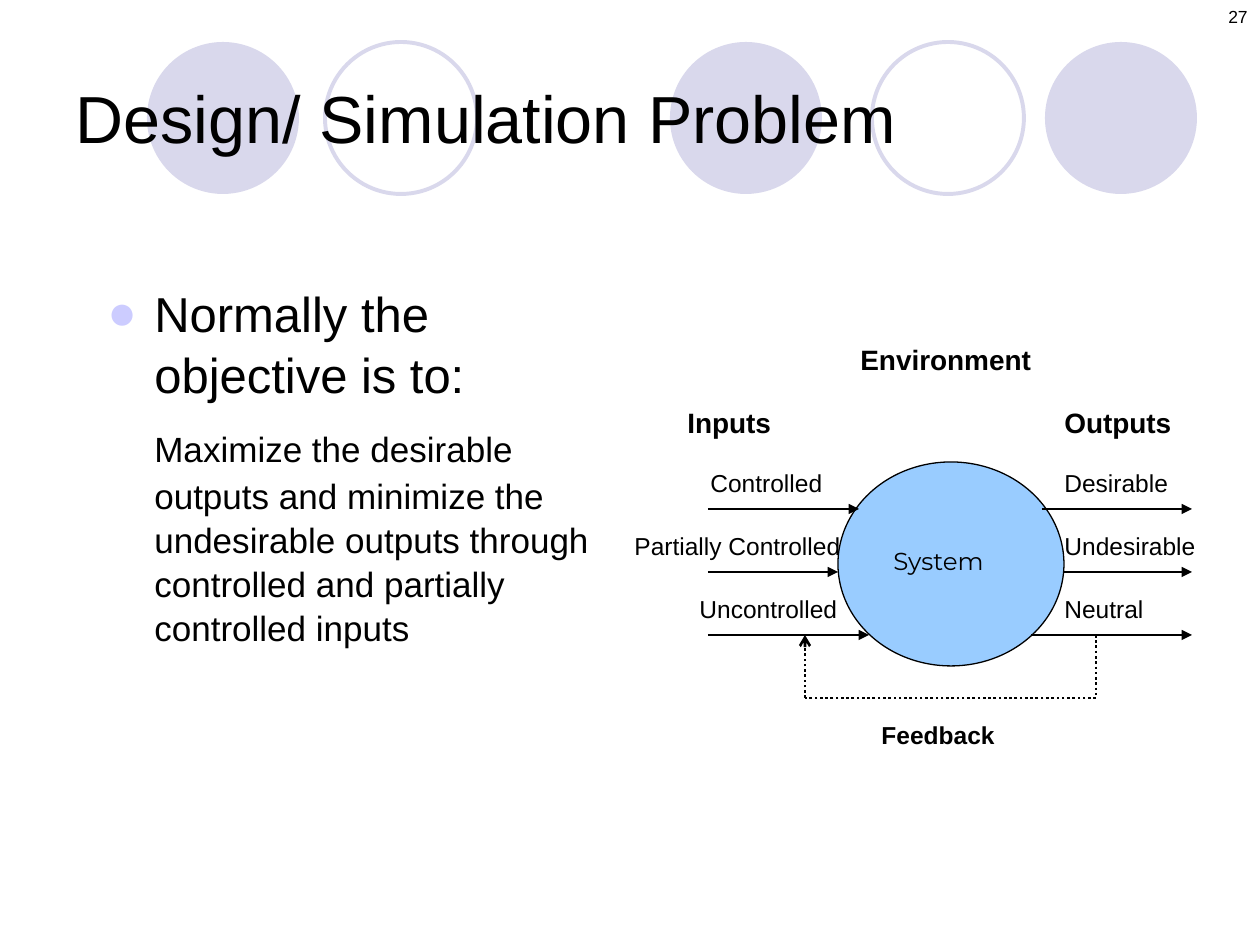
from dataclasses import dataclass

from lxml.etree import SubElement
from pptx import Presentation
from pptx.dml.color import RGBColor
from pptx.enum.dml import MSO_LINE as Dash
from pptx.enum.shapes import MSO_CONNECTOR as Link, MSO_SHAPE as Form
from pptx.enum.text import MSO_ANCHOR as Anchor, PP_ALIGN as Align
from pptx.oxml.ns import qn
from pptx.util import Emu, Pt

UNIT = 914400 / 126
BLACK, WHITE, LILAC, BLUE = "000000", "FFFFFF", "D9D8EC", "99CCFF"
ROW = 63
HEAD = 399
FLOW = 509


@dataclass
class Label:
    text: str
    x: int
    y: int
    wide: int
    size: int = 14
    bold: bool = False
    font: str = "Arial"
    fill: str = WHITE


@dataclass
class Line:
    x1: int
    y1: int
    x2: int
    y2: int
    head: str = "triangle"
    dots: bool = False


@dataclass
class Disc:
    x: int
    y: int
    wide: int
    high: int
    fill: str = ""
    edge: str = ""
    weight: float = 0.75


DISCS = [Disc(x, 42, 152, 152, fill=LILAC) for x in (147, 670, 1045)]
RINGS = [Disc(x, 42, 152, 152, edge=LILAC, weight=2.25) for x in (325, 872)]
CORE = Disc(838, 462, 226, 204, BLUE, BLACK)
LABELS = [
    Label("Neutral", 1052, HEAD + 3 * ROW, 204),
    Label("Undesirable", 1052, HEAD + 2 * ROW, 173),
    Label("Desirable", 1052, HEAD + ROW, 151),
    Label("Controlled", 698, HEAD + ROW, 140),
    Label("Uncontrolled", 687, HEAD + 3 * ROW, 194),
    Label("Partially Controlled", 622, HEAD + 2 * ROW, 247),
]
SYSTEM = Label("System", 881, 540, 140, font="Montserrat", fill=BLUE)
HEADS = [
    Label("Inputs", 675, HEAD, 183, 16, True),
    Label("Outputs", 1052, HEAD, 151, 16, True),
    Label("Environment", 848, HEAD - ROW, 258, 16, True),
    Label("Feedback", 869, 714, 194, 14, True),
]
SPANS = [(708, 859), (708, 838), (708, 869), (1042, 1192), (1064, 1192), (1031, 1192)]
FLOWS = [
    Line(a, FLOW + i % 3 * ROW, b, FLOW + i % 3 * ROW)
    for i, (a, b) in enumerate(SPANS)
]
LOOP = [
    Line(1096, 635, 1096, 698, "", True),
    Line(1096, 698, 805, 698, "", True),
    Line(805, 698, 805, 635, "arrow", True),
]


def px(n: int) -> Emu:
    """Turn pixels into EMU."""
    return Emu(round(n * UNIT))


def tint(code: str) -> RGBColor:
    """Turn a hex string into a colour."""
    return RGBColor.from_string(code)


def write(para, text: str, size: int, bold: bool = False, font: str = "Arial") -> None:
    """Add one run to a paragraph."""
    run = para.add_run()
    run.text = text
    run.font.size = Pt(size)
    run.font.bold = bold
    run.font.name = font
    run.font.color.rgb = tint(BLACK)


def draw_disc(slide, disc: Disc) -> None:
    """Draw a filled or outlined ellipse."""
    shape = slide.shapes.add_shape(
        Form.OVAL, px(disc.x), px(disc.y), px(disc.wide), px(disc.high)
    )
    shape.shadow.inherit = False
    if disc.fill:
        shape.fill.solid()
        shape.fill.fore_color.rgb = tint(disc.fill)
    else:
        shape.fill.background()
    if disc.edge:
        shape.line.color.rgb = tint(disc.edge)
        shape.line.width = Pt(disc.weight)
    else:
        shape.line.fill.background()


def draw_label(slide, label: Label) -> None:
    """Draw a filled box with left-aligned text."""
    shape = slide.shapes.add_shape(
        Form.RECTANGLE, px(label.x), px(label.y), px(label.wide), px(48)
    )
    shape.shadow.inherit = False
    shape.fill.solid()
    shape.fill.fore_color.rgb = tint(label.fill)
    shape.line.fill.background()
    frame = shape.text_frame
    frame.word_wrap = True
    frame.vertical_anchor = Anchor.TOP
    para = frame.paragraphs[0]
    para.alignment = Align.LEFT
    write(para, label.text, label.size, label.bold, label.font)


def draw_line(slide, line: Line) -> None:
    """Draw a straight line with its dots and arrowhead."""
    link = slide.shapes.add_connector(
        Link.STRAIGHT, px(line.x1), px(line.y1), px(line.x2), px(line.y2)
    )
    link.line.color.rgb = tint(BLACK)
    link.line.width = Pt(1.5)
    if line.dots:
        link.line.dash_style = Dash.ROUND_DOT
    if line.head:
        SubElement(link.line._get_or_add_ln(), qn("a:tailEnd"), type=line.head)
    SubElement(link._element.spPr, qn("a:effectLst"))


def add_box(slide, x: int, y: int, wide: int, high: int):
    """Add a wrapping text box and return its frame."""
    frame = slide.shapes.add_textbox(px(x), px(y), px(wide), px(high)).text_frame
    frame.word_wrap = True
    return frame


def add_title(slide) -> None:
    """Place the title in front of the discs."""
    title = slide.shapes.title
    title.left, title.top, title.width, title.height = px(63), px(38), px(1134), px(157)
    title.text_frame.vertical_anchor = Anchor.MIDDLE
    para = title.text_frame.paragraphs[0]
    para.alignment = Align.LEFT
    write(para, "Design/ Simulation Problem", 38)
    slide.shapes._spTree.append(title._element)


def add_body(slide) -> None:
    """Add the bullet and the text hanging under it."""
    frame = add_box(slide, 95, 274, 530, 567)
    top, sub = frame.paragraphs[0], frame.add_paragraph()
    for para in (top, sub):
        para.line_spacing = 1.05
        props = para._p.get_or_add_pPr()
        props.set("marL", str(px(47)))
        props.set("indent", str(px(-47)))
    sub.space_before = Pt(4)
    props = top._p.get_or_add_pPr()
    SubElement(SubElement(props, qn("a:buClr")), qn("a:srgbClr"), val="CCCCFF")
    SubElement(props, qn("a:buFont"), typeface="Arial")
    SubElement(props, qn("a:buChar"), char="●")
    write(top, "Normally the objective is to:", 28)
    write(sub, "\t", 28)
    write(
        sub,
        "Maximize the desirable outputs and minimize the undesirable outputs "
        "through controlled and partially controlled inputs",
        20,
    )


def main() -> None:
    """Build the slide and save it."""
    deck = Presentation()
    deck.slide_width, deck.slide_height = px(1260), px(945)
    slide = deck.slides.add_slide(deck.slide_layouts[5])
    for disc in DISCS + RINGS:
        draw_disc(slide, disc)
    add_title(slide)
    add_body(slide)
    for label in LABELS:
        draw_label(slide, label)
    draw_disc(slide, CORE)
    for label in [SYSTEM] + HEADS:
        draw_label(slide, label)
    for line in FLOWS + LOOP:
        draw_line(slide, line)
    para = add_box(slide, 966, 0, 294, 63).paragraphs[0]
    para.alignment = Align.RIGHT
    write(para, "27", 10)
    deck.save("out.pptx")


if __name__ == "__main__":
    main()
